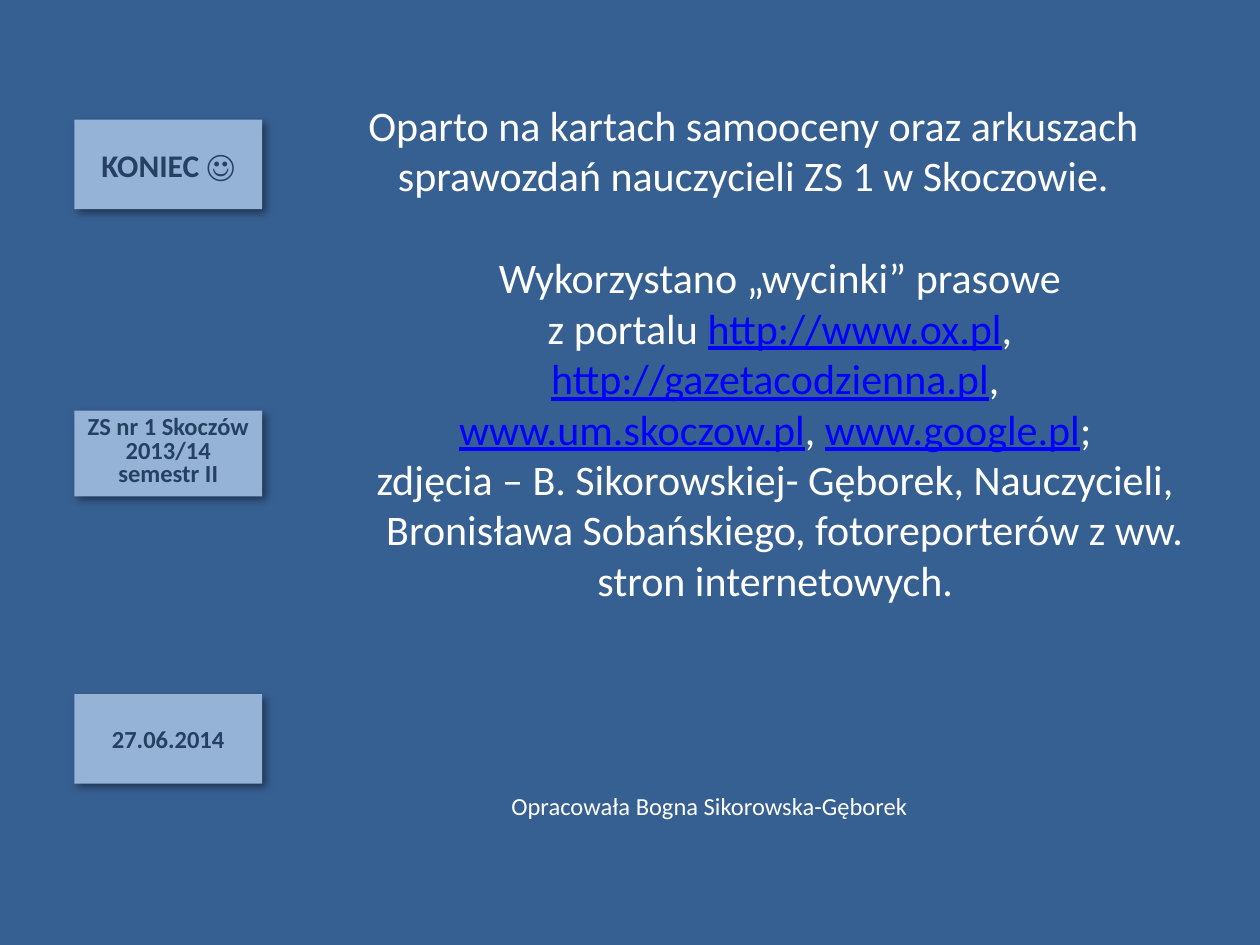
from lxml import etree
from pptx import Presentation
from pptx.dml.color import RGBColor
from pptx.enum.shapes import MSO_SHAPE
from pptx.enum.text import MSO_ANCHOR, MSO_AUTO_SIZE, PP_ALIGN
from pptx.oxml.ns import qn
from pptx.util import Inches, Pt

RECTANGLE = MSO_SHAPE.RECTANGLE
TOP, MIDDLE = MSO_ANCHOR.TOP, MSO_ANCHOR.MIDDLE
GROW = MSO_AUTO_SIZE.SHAPE_TO_FIT_TEXT
LEFT, CENTER = PP_ALIGN.LEFT, PP_ALIGN.CENTER

WIDTH, HEIGHT = 10, 7.5
COLUMNS, ROWS = 100, 75
BLANK_LAYOUT = 6

CARD_LEFT, CARD_WIDTH = 5.9, 14.9
TEXT_LEFT = 27.8

SOURCES = [
    ["Wykorzystano „wycinki” prasowe"],
    ["z portalu ", "http://www.ox.pl", ", ", "http://gazetacodzienna.pl", ", "],
    ["www.um.skoczow.pl", ", ", "www.google.pl", "; "],
    ["zdjęcia – B. Sikorowskiej- Gęborek, Nauczycieli, "],
    [" Bronisława Sobańskiego, fotoreporterów z ww. stron internetowych. "],
]


def color(value):
    return RGBColor.from_string(value)


def is_link(text):
    return text.startswith(("http://", "www."))


class SlideBuilder:
    """Holds the style and the slide; places are columns and rows of the grid."""

    font_name = "Calibri"
    background = "376092"
    card_fill = "95B3D7"
    card_text = "254061"
    text_color = "FFFFFF"
    link_color = "0000FF"

    def __init__(self, presentation):
        self.slide = presentation.slides.add_slide(
            presentation.slide_layouts[BLANK_LAYOUT])
        self.column = presentation.slide_width / COLUMNS
        self.row = presentation.slide_height / ROWS
        fill = self.slide.background.fill
        fill.solid()
        fill.fore_color.rgb = color(self.background)

    def place(self, left, top, width, height):
        return (round(left * self.column), round(top * self.row),
                round(width * self.column), round(height * self.row))

    def add_paragraphs(self, frame, paragraphs, size, text_color,
                       bold=False, align=CENTER, spacing=None):
        """Fill the frame with paragraphs, each a list of run texts."""
        for index, texts in enumerate(paragraphs):
            paragraph = frame.add_paragraph() if index else frame.paragraphs[0]
            paragraph.alignment = align
            paragraph.line_spacing = spacing
            for text in texts:
                run = paragraph.add_run()
                run.text = text
                font = run.font
                font.name, font.size, font.bold = self.font_name, Pt(size), bold
                font.underline = is_link(text)
                font.color.rgb = color(
                    self.link_color if is_link(text) else text_color)

    def add_shadow(self, shape):
        shape.shadow.inherit = False
        effects = shape._element.spPr.find(qn("a:effectLst"))
        shadow = etree.SubElement(
            effects, qn("a:outerShdw"), blurRad=str(Pt(5)), dist=str(Pt(3)),
            dir=str(45 * 60000), algn="tl", rotWithShape="0")
        shade = etree.SubElement(shadow, qn("a:srgbClr"), val="000000")
        etree.SubElement(shade, qn("a:alpha"), val="43000")

    def card(self, top, height, paragraphs, size, anchor=MIDDLE, spacing=None):
        shape = self.slide.shapes.add_shape(
            RECTANGLE, *self.place(CARD_LEFT, top, CARD_WIDTH, height))
        shape.fill.solid()
        shape.fill.fore_color.rgb = color(self.card_fill)
        shape.line.fill.background()
        self.add_shadow(shape)
        frame = shape.text_frame
        frame.word_wrap = True
        frame.vertical_anchor = anchor
        self.add_paragraphs(frame, paragraphs, size, self.card_text,
                            bold=True, spacing=spacing)

    def text(self, place, paragraphs, size, align=CENTER, wrap=True):
        frame = self.slide.shapes.add_textbox(*self.place(*place)).text_frame
        frame.word_wrap = wrap
        frame.auto_size = GROW
        self.add_paragraphs(frame, paragraphs, size, self.text_color,
                            align=align)


def main():
    presentation = Presentation()
    presentation.slide_width = Inches(WIDTH)
    presentation.slide_height = Inches(HEIGHT)

    builder = SlideBuilder(presentation)
    builder.card(9.5, 7.1, [["KONIEC ☺"]], 18)
    builder.card(55.1, 7.1, [["27.06.2014"]], 14)
    builder.card(32.6, 6.8, [["ZS nr 1 Skoczów 2013/14"], ["semestr II"]], 14,
                 anchor=TOP, spacing=0.8)
    builder.text((TEXT_LEFT, 19.5, 68.2, 29.3), SOURCES, 24)
    builder.text((39.6, 62.3, 33.9, 3.4),
                 [["Opracowała Bogna Sikorowska-Gęborek"]], 14,
                 align=LEFT, wrap=False)
    builder.text((TEXT_LEFT, 7.4, 64, 9.1),
                 [["Oparto na kartach samooceny oraz arkuszach "
                   "sprawozdań nauczycieli ZS 1 w Skoczowie."]], 24)

    presentation.save("out.pptx")


if __name__ == "__main__":
    main()
